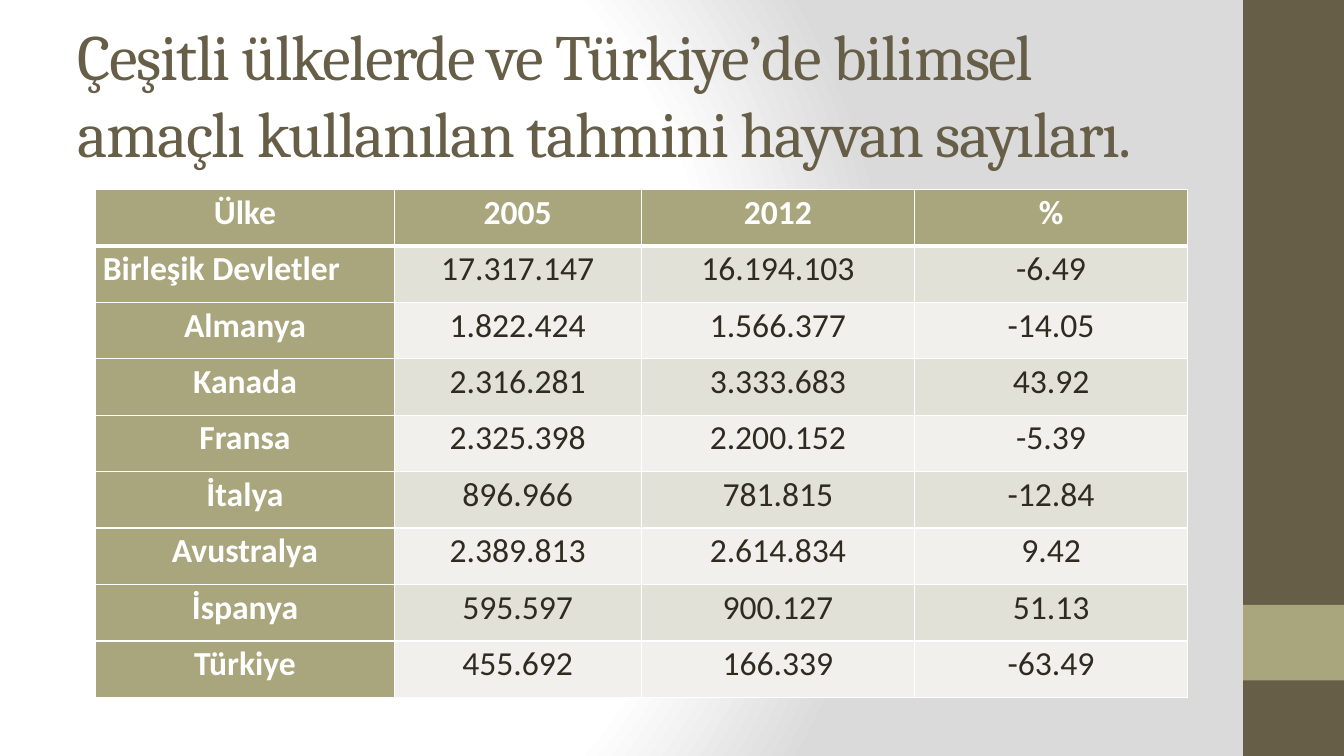
from typing import NamedTuple

import pptx
import pptx.dml.color
import pptx.enum.shapes
import pptx.enum.text
import pptx.oxml
import pptx.oxml.ns
import pptx.util
from lxml import etree

Inches = pptx.util.Inches
Pt = pptx.util.Pt
Align = pptx.enum.text.PP_ALIGN

BROWN, OLIVE, DARK, WHITE = "675E47", "A9A57C", "2F2B20", "FFFFFF"
BANDS = ("E2E1D7", "F1F0EC")
TITLE = "Çeşitli ülkelerde ve Türkiye’de bilimsel amaçlı kullanılan tahmini hayvan sayıları."
COLUMN_WIDTHS = (2.96, 2.45, 2.71, 2.71)
ROW_HEIGHT = 0.56


class Bar(NamedTuple):
    top: float
    height: float
    fill: str


class CountryRow(NamedTuple):
    country: str
    count_2005: str
    count_2012: str
    change: str


SIDE_BARS = (Bar(0, 7.5, BROWN), Bar(6, 0.75, OLIVE))
ROWS = (
    CountryRow("Ülke", "2005", "2012", "%"),
    CountryRow("Birleşik Devletler", "17.317.147", "16.194.103", "-6.49"),
    CountryRow("Almanya", "1.822.424", "1.566.377", "-14.05"),
    CountryRow("Kanada", "2.316.281", "3.333.683", "43.92"),
    CountryRow("Fransa", "2.325.398", "2.200.152", "-5.39"),
    CountryRow("İtalya", "896.966", "781.815", "-12.84"),
    CountryRow("Avustralya", "2.389.813", "2.614.834", "9.42"),
    CountryRow("İspanya", "595.597", "900.127", "51.13"),
    CountryRow("Türkiye", "455.692", "166.339", "-63.49"),
)


def color(value: str) -> pptx.dml.color.RGBColor:
    return pptx.dml.color.RGBColor.from_string(value)


def set_font(paragraph, name: str, size: int, value: str, bold: bool = False) -> None:
    font = paragraph.font
    font.name, font.size, font.bold = name, Pt(size), bold
    font.color.rgb = color(value)


def set_background(slide) -> None:
    slide.background.fill.solid()
    solid = slide.element.find(".//" + pptx.oxml.ns.qn("p:bgPr"))[0]
    stops = "".join(
        f'<a:gs pos="{position * 1000}"><a:srgbClr val="{value}"/></a:gs>'
        for position, value in ((0, WHITE), (75, WHITE), (100, "DADADA"))
    )
    gradient = pptx.oxml.parse_xml(
        f'<a:gradFill {pptx.oxml.ns.nsdecls("a")} rotWithShape="1"><a:gsLst>{stops}</a:gsLst>'
        '<a:path path="circle"><a:fillToRect l="20000" t="50000" r="100000" b="50000"/></a:path>'
        "</a:gradFill>"
    )
    solid.getparent().replace(solid, gradient)


def add_bar(slide, bar: Bar) -> None:
    shape = slide.shapes.add_shape(
        pptx.enum.shapes.MSO_SHAPE.RECTANGLE,
        Inches(12.33), Inches(bar.top), Inches(1), Inches(bar.height),
    )
    shape.shadow.inherit = False
    shape.fill.solid()
    shape.fill.fore_color.rgb = color(bar.fill)
    shape.line.fill.background()


def add_title(slide) -> None:
    box = slide.shapes.add_textbox(Inches(0.67), Inches(0.3), Inches(11.11), Inches(1.25))
    frame = box.text_frame
    frame.word_wrap = True
    frame.vertical_anchor = pptx.enum.text.MSO_ANCHOR.MIDDLE
    paragraph = frame.paragraphs[0]
    run = paragraph.add_run()
    run.text = TITLE
    set_font(paragraph, "Cambria", 46, BROWN)
    run.font.bold = False
    # Tighten the letters by one point
    run.font._element.set("spc", "-100")


def set_borders(cell, row: int) -> None:
    widths = {"lnL": 1, "lnR": 1, "lnT": 3 if row == 1 else 1, "lnB": 3 if row == 0 else 1}
    properties = cell._tc.get_or_add_tcPr()
    for index, (side, width) in enumerate(widths.items()):
        line = etree.Element(pptx.oxml.ns.qn(f"a:{side}"), w=str(Pt(width)))
        fill = etree.SubElement(line, pptx.oxml.ns.qn("a:solidFill"))
        etree.SubElement(fill, pptx.oxml.ns.qn("a:srgbClr"), val=WHITE)
        properties.insert(index, line)


def fill_cell(cell, text: str, row: int, column: int) -> None:
    heading = row == 0 or column == 0
    cell.text = text
    cell.margin_left = cell.margin_right = Inches(0.07)
    cell.margin_top = cell.margin_bottom = 0
    cell.fill.solid()
    cell.fill.fore_color.rgb = color(OLIVE if heading else BANDS[(row - 1) % 2])
    paragraph = cell.text_frame.paragraphs[0]
    paragraph.alignment = Align.JUSTIFY if (row, column) == (1, 0) else Align.CENTER
    paragraph.line_spacing = 1.07
    set_font(paragraph, "Calibri", 24, WHITE if heading else DARK, heading)
    set_borders(cell, row)


def add_animal_table(slide) -> None:
    table = slide.shapes.add_table(
        len(ROWS), len(COLUMN_WIDTHS), Inches(0.95), Inches(1.88),
        Inches(sum(COLUMN_WIDTHS)), Inches(ROW_HEIGHT * len(ROWS)),
    ).table
    table.first_col = True
    for column, width in zip(table.columns, COLUMN_WIDTHS):
        column.width = Inches(width)
    for row, values in enumerate(ROWS):
        table.rows[row].height = Inches(ROW_HEIGHT)
        for column, text in enumerate(values):
            fill_cell(table.cell(row, column), text, row, column)


def main() -> None:
    presentation = pptx.Presentation()
    presentation.slide_width = Inches(13.33)
    presentation.slide_height = Inches(7.5)
    slide = presentation.slides.add_slide(presentation.slide_layouts[6])
    # Backdrop and side bars
    set_background(slide)
    for bar in SIDE_BARS:
        add_bar(slide, bar)
    # Content
    add_title(slide)
    add_animal_table(slide)
    presentation.save("out.pptx")


if __name__ == "__main__":
    main()
